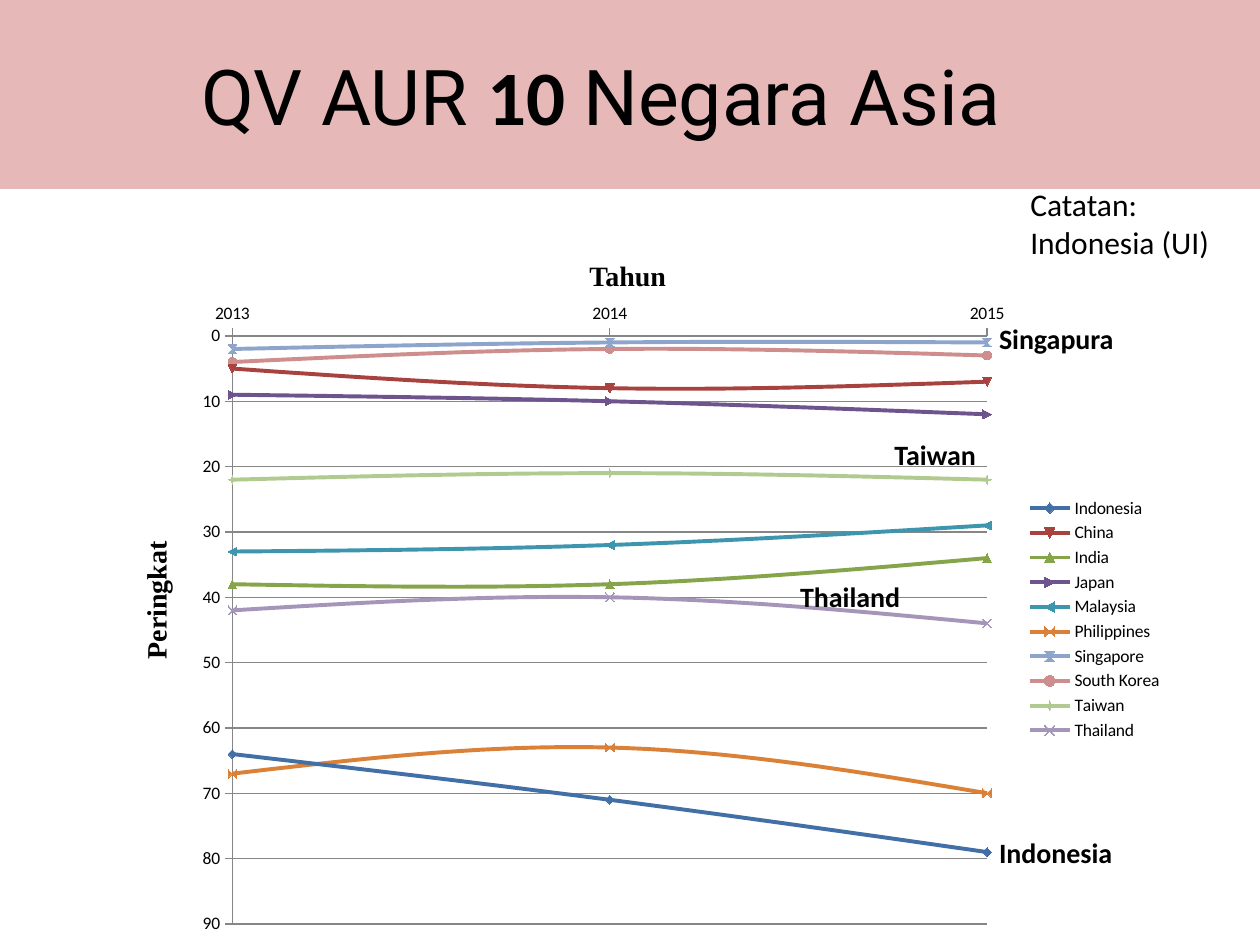
from dataclasses import dataclass

from lxml.etree import SubElement
from pptx import Presentation
from pptx.chart.data import XyChartData
from pptx.dml.color import RGBColor
from pptx.enum.chart import XL_CHART_TYPE, XL_LEGEND_POSITION, XL_TICK_MARK
from pptx.enum.shapes import MSO_SHAPE
from pptx.enum.text import MSO_ANCHOR, MSO_AUTO_SIZE, PP_ALIGN
from pptx.oxml.ns import qn
from pptx.util import Cm, Pt

COLORS = {"text": "000000", "banner": "E6B9B8", "axis": "868686"}
YEARS = (2013, 2014, 2015)
PLOT = {"x": 0.044, "y": 0.065, "w": 0.765, "h": 0.903}


@dataclass
class Country:
    name: str
    ranks: tuple[int, int, int]
    color: str


@dataclass
class Label:
    lines: tuple[str, ...]
    left: float
    top: float
    width: float
    height: float = 0.94
    size: int = 16
    font: str = "Calibri"
    bold: bool = True
    rotation: int = 0


COUNTRIES = [
    Country("Indonesia", (64, 71, 79), "416FA6"),
    Country("China", (5, 8, 7), "A8423F"),
    Country("India", (38, 38, 34), "86A44A"),
    Country("Japan", (9, 10, 12), "6E548D"),
    Country("Malaysia", (33, 32, 29), "3D96AE"),
    Country("Philippines", (67, 63, 70), "DA8137"),
    Country("Singapore", (2, 1, 1), "8EA5CB"),
    Country("South Korea", (4, 2, 3), "CE8E8D"),
    Country("Taiwan", (22, 21, 22), "B1CA8F"),
    Country("Thailand", (42, 40, 44), "A596B9"),
]

LABELS = [
    Label(("Tahun",), 11.63, 5.08, 2.08, font="Times New Roman"),
    Label(("Peringkat",), 1.68, 11.61, 2.92, font="Times New Roman", rotation=270),
    Label(("Catatan:", "Indonesia (UI)"), 20.52, 3.61, 4.17, 1.8, size=18, bold=False),
    Label(("Indonesia",), 19.89, 16.71, 2.82),
    Label(("Taiwan",), 17.78, 8.69, 2.18),
    Label(("Singapura",), 19.89, 6.35, 2.87),
    Label(("Thailand",), 15.88, 11.56, 2.54),
]


def rgb(value: str) -> RGBColor:
    return RGBColor.from_string(value)


def style_font(font, size: float, name: str, bold: bool = False) -> None:
    font.size = Pt(size)
    font.name = name
    font.bold = bold
    font.color.rgb = rgb(COLORS["text"])


def style_axis(axis, low: int, high: int, step: int) -> None:
    axis.minimum_scale, axis.maximum_scale, axis.major_unit = low, high, step
    axis.major_tick_mark = XL_TICK_MARK.OUTSIDE
    axis.minor_tick_mark = XL_TICK_MARK.NONE
    axis.has_title = False
    axis.format.line.color.rgb = rgb(COLORS["axis"])
    axis.format.line.width = Pt(0.75)


def place_plot(chart) -> None:
    area = chart._chartSpace.find(".//" + qn("c:plotArea"))
    layout = area.find(qn("c:layout"))
    if layout is None:
        layout = SubElement(area, qn("c:layout"))
        area.insert(0, layout)
    manual = SubElement(layout, qn("c:manualLayout"))
    values = {"layoutTarget": "inner", "xMode": "edge", "yMode": "edge", **PLOT}
    for tag, value in values.items():
        SubElement(manual, qn(f"c:{tag}")).set("val", str(value))


def style_series(ser, country: Country, index: int) -> None:
    color = rgb(country.color)
    ser.format.line.color.rgb = color
    ser.format.line.width = Pt(2.25)
    ser.marker.format.fill.solid()
    ser.marker.format.fill.fore_color.rgb = color
    ser.marker.format.line.color.rgb = color
    ser._element.find(qn("c:idx")).set("val", str(index))
    ser._element.find(qn("c:smooth")).set("val", "1")


def add_rank_chart(s, countries: list[Country]) -> None:
    data = XyChartData()
    for country in countries:
        points = data.add_series(country.name)
        for year, rank in zip(YEARS, country.ranks):
            points.add_data_point(year, rank)
    chart = s.shapes.add_chart(
        XL_CHART_TYPE.XY_SCATTER_SMOOTH, Cm(3.81), Cm(5.92), Cm(19.89), Cm(13.13), data
    ).chart
    style_font(chart.font, 10, "Calibri")
    chart.has_title = False
    chart.has_legend = True
    chart.legend.position = XL_LEGEND_POSITION.RIGHT
    chart.legend.include_in_layout = False
    chart.plots[0].vary_by_categories = False
    style_axis(chart.category_axis, YEARS[0], YEARS[-1], 1)
    chart.category_axis.has_major_gridlines = False
    style_axis(chart.value_axis, 0, 90, 10)
    chart.value_axis.reverse_order = True
    chart.value_axis.has_major_gridlines = True
    grid = chart.value_axis.major_gridlines.format.line
    grid.color.rgb = rgb(COLORS["axis"])
    grid.width = Pt(0.75)
    place_plot(chart)
    for index, (ser, country) in enumerate(zip(chart.plots[0].series, countries), 1):
        style_series(ser, country, index)


def add_banner(s) -> None:
    sp = s.shapes.add_shape(MSO_SHAPE.RECTANGLE, 0, 0, Cm(25.4), Cm(3.81))
    sp.shadow.inherit = False
    sp.fill.solid()
    sp.fill.fore_color.rgb = rgb(COLORS["banner"])
    sp.line.fill.background()
    tf = sp.text_frame
    tf.word_wrap = True
    tf.vertical_anchor = MSO_ANCHOR.MIDDLE
    tf.margin_right = Cm(1.42)
    p = tf.paragraphs[0]
    p.alignment = PP_ALIGN.CENTER
    for text, name, bold in (
        ("QV AUR ", "Roboto", False),
        ("10 ", "Calibri", True),
        ("Negara Asia", "Roboto", False),
    ):
        r = p.add_run()
        r.text = text
        style_font(r.font, 44, name, bold)


def add_label(s, label: Label) -> None:
    sp = s.shapes.add_textbox(
        Cm(label.left), Cm(label.top), Cm(label.width), Cm(label.height)
    )
    sp.rotation = label.rotation
    tf = sp.text_frame
    tf.word_wrap = False
    tf.auto_size = MSO_AUTO_SIZE.SHAPE_TO_FIT_TEXT
    tf.text = "\n".join(label.lines)
    for p in tf.paragraphs:
        style_font(p.font, label.size, label.font, label.bold)


def main() -> None:
    prs = Presentation()
    prs.slide_width, prs.slide_height = Cm(25.4), Cm(19.05)
    s = prs.slides.add_slide(prs.slide_layouts[6])
    add_rank_chart(s, COUNTRIES)
    add_banner(s)
    for label in LABELS:
        add_label(s, label)
    prs.save("out.pptx")


if __name__ == "__main__":
    main()
